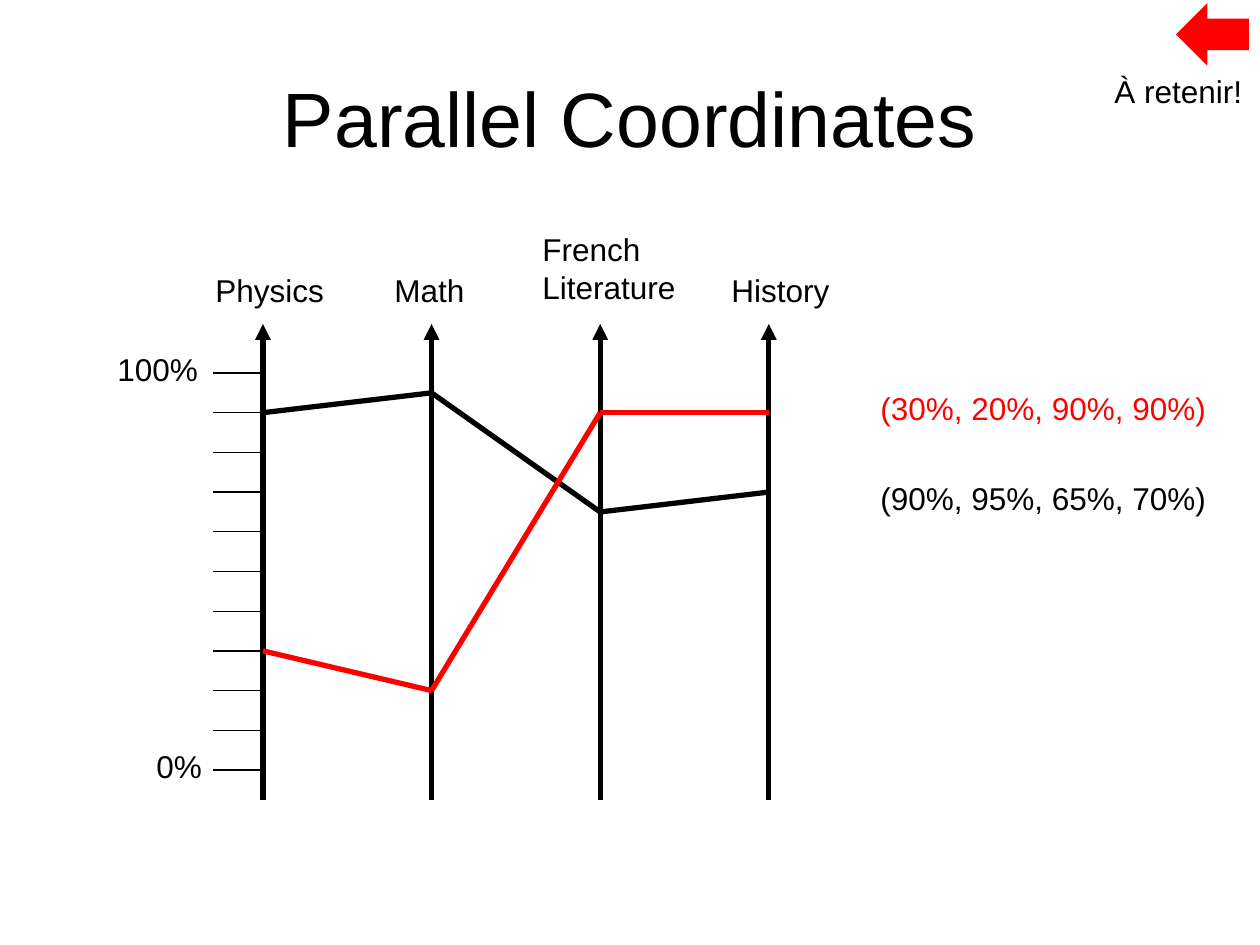
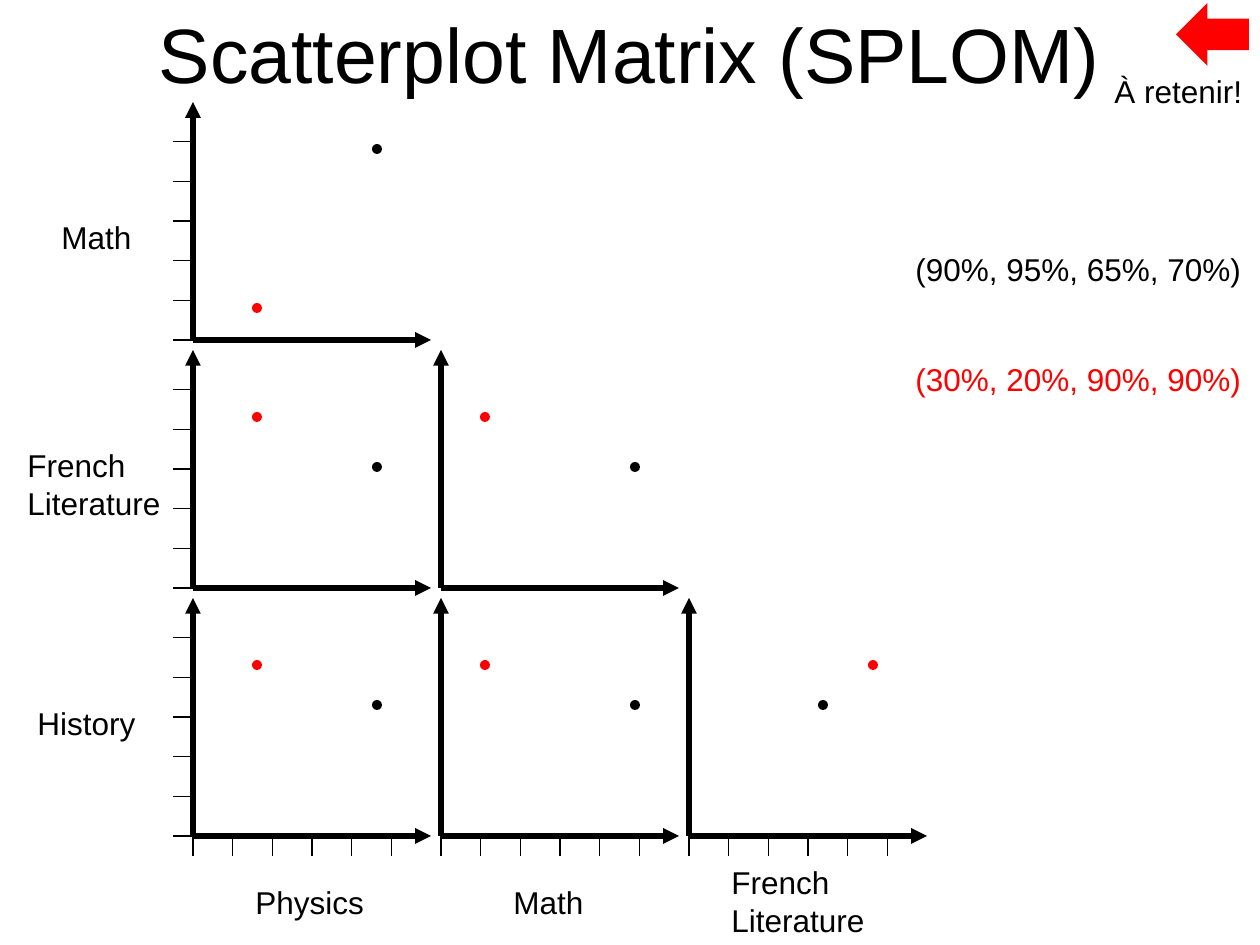
from pptx import Presentation
from pptx.dml.color import RGBColor
from pptx.enum.shapes import MSO_CONNECTOR as Link, MSO_SHAPE as Kind
from pptx.enum.text import MSO_ANCHOR as Anchor, PP_ALIGN as Align
from pptx.oxml.ns import qn
from pptx.util import Pt
from lxml import etree

PX = 914400 / 126  # one px in EMU
BLACK, RED = "000000", "FF0000"
FONT = "Arial"
THICK, THIN = 3, 0.75

# Content
SUBJECTS = ["Physics", "Math", "French\nLiterature", "History"]
MARKS = [(BLACK, (90, 95, 65, 70)), (RED, (30, 20, 90, 90))]
WIDTHS = [139, 108, 159, 139]
NOTE = "À retenir!"

# Parallel coordinates: label places, scale labels, legend tops
HEADS = [(203, 265), (382, 265), (530, 224), (719, 265)]
SCALE = [("100%", 105, 344), ("0%", 144, 741)]
KEYS = [(868, 473), (868, 383)]

# Scatterplot matrix: label places, legend tops, dot heights over each x axis
SIDES = [(49, 212), (15, 440), (25, 698)]
FEET = [(243, 877), (501, 877), (719, 857)]
SPLOM_KEYS = [(903, 244), (903, 354)]
RISES = [(191, 32), (121, 171), (131, 171)]


def emu(*vals):
    return [round(v * PX) for v in vals]


def rgb(color):
    return RGBColor.from_string(color)


def text(slide, words, x, y, w, h=50, color=BLACK, size=18):
    box = slide.shapes.add_textbox(*emu(x, y, w, h))
    frame = box.text_frame
    frame.word_wrap = True
    para = frame.paragraphs[0]
    para.text = words
    font = para.font
    font.name, font.size = FONT, Pt(size)
    font.color.rgb = rgb(color)
    return frame


def line(slide, x1, y1, x2, y2, width=THIN, color=BLACK, arrow=False):
    link = slide.shapes.add_connector(Link.STRAIGHT, *emu(x1, y1, x2, y2))
    link.line.width = Pt(width)
    link.line.color.rgb = rgb(color)
    props = link._element.spPr
    if arrow:
        etree.SubElement(link.line._get_or_add_ln(), qn("a:tailEnd"), type="triangle")
    etree.SubElement(props, qn("a:effectLst"))


def shape(slide, kind, x, y, w, h, color):
    item = slide.shapes.add_shape(kind, *emu(x, y, w, h))
    item.shadow.inherit = False
    item.fill.solid()
    item.fill.fore_color.rgb = rgb(color)
    item.line.fill.background()


def label(slide, idx, place):
    name = SUBJECTS[idx]
    text(slide, name, *place, WIDTHS[idx], 88 if "\n" in name else 50)


def start(deck, title, y, h):
    """Add a slide with its title, red arrow and note."""
    slide = deck.slides.add_slide(deck.slide_layouts[6])
    frame = text(slide, title, 63, y, 1134, h, size=44)
    frame.vertical_anchor = Anchor.MIDDLE
    frame.paragraphs[0].alignment = Align.CENTER
    shape(slide, Kind.LEFT_ARROW, 1176, 3, 73, 63, RED)
    text(slide, NOTE, 1102, 66, 158)
    return slide


def legend(slide, places):
    for (color, vals), place in zip(MARKS, places):
        words = "(" + ", ".join(f"{v}%" for v in vals) + ")"
        text(slide, words, *place, 357, color=color)


def parallel(deck):
    slide = start(deck, "Parallel Coordinates", 38, 157)
    left, gap, base, unit = 263, 168.6, 770, 3.97

    # Axes and their names
    for i, place in enumerate(HEADS):
        x = left + i * gap
        line(slide, x, 800, x, 324, THICK, arrow=True)
        label(slide, i, place)

    # Scale
    for mark in range(0, 101, 10):
        y = base - mark * unit
        line(slide, left - 50, y, left, y)
    for words, x, y in SCALE:
        text(slide, words, x, y, 110)

    # One broken line for each student
    for color, vals in MARKS:
        dots = [(left + i * gap, base - v * unit) for i, v in enumerate(vals)]
        for a, b in zip(dots, dots[1:]):
            line(slide, *a, *b, THICK, color)
    legend(slide, KEYS)


def matrix(deck):
    slide = start(deck, "Scatterplot Matrix (SPLOM)", 0, 106)
    left, top, gap, reach, tick, dot = 193, 340, 248, 238, 20, 10
    last = len(RISES) - 1
    steps = [k * 39.7 for k in range(6)]

    for row, rises in enumerate(RISES):
        y = top + row * gap
        for col in range(row + 1):
            x = left + col * gap
            # Axes
            line(slide, x, y, x, y - reach, THICK, arrow=True)
            line(slide, x, y, x + reach, y, THICK, arrow=True)
            # Ticks on the outer edges only
            for step in steps:
                if col == 0:
                    line(slide, x - tick, y - step, x, y - step)
                if row == last:
                    line(slide, x + step, y, x + step, y + tick)
            # Dots
            for (color, vals), rise in zip(MARKS, rises):
                across = x + 4 + 2 * vals[col]
                shape(slide, Kind.OVAL, across - dot / 2, y - rise - dot / 2,
                      dot, dot, color)

    # Names of rows and columns
    for i, place in enumerate(SIDES):
        label(slide, i + 1, place)
    for i, place in enumerate(FEET):
        label(slide, i, place)
    legend(slide, SPLOM_KEYS)


def main():
    deck = Presentation()
    deck.slide_width, deck.slide_height = emu(1260, 945)
    parallel(deck)
    matrix(deck)
    deck.save("out.pptx")


if __name__ == "__main__":
    main()
